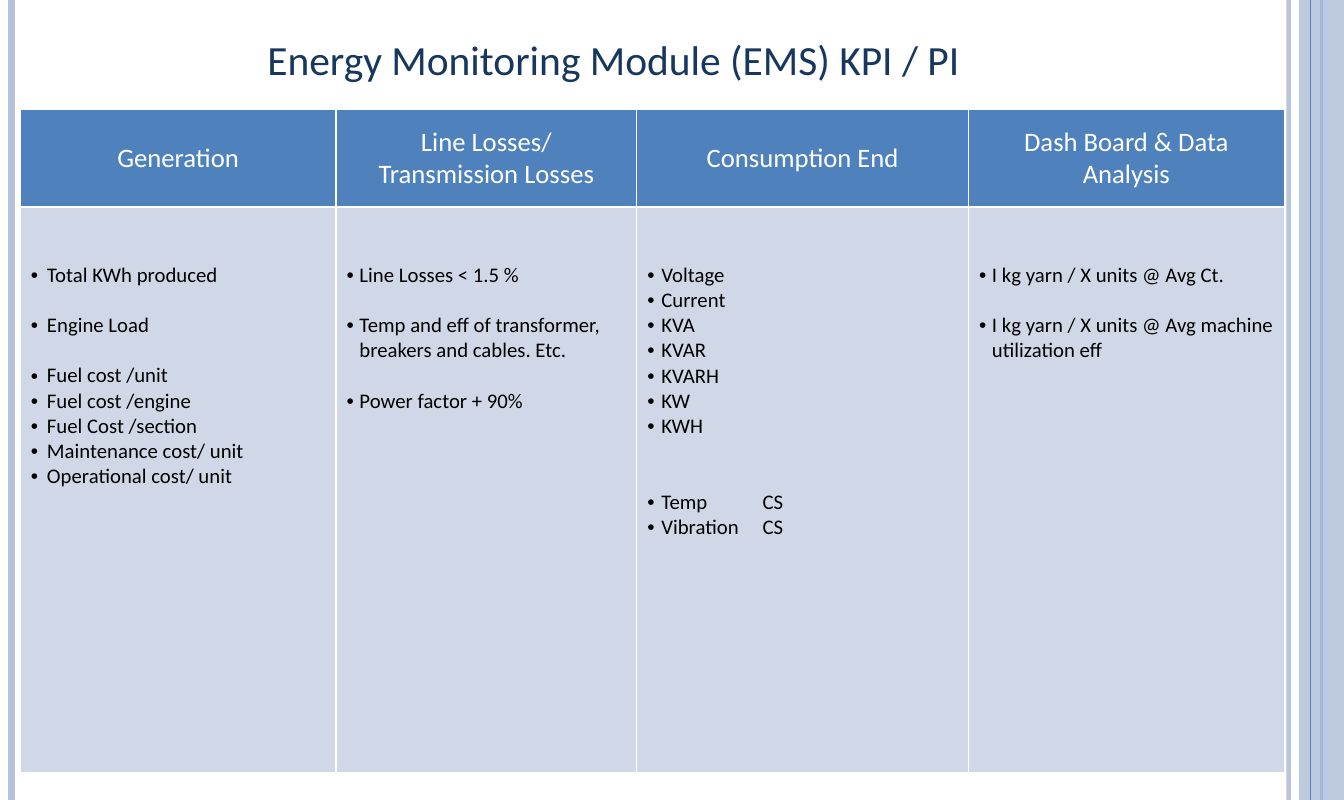
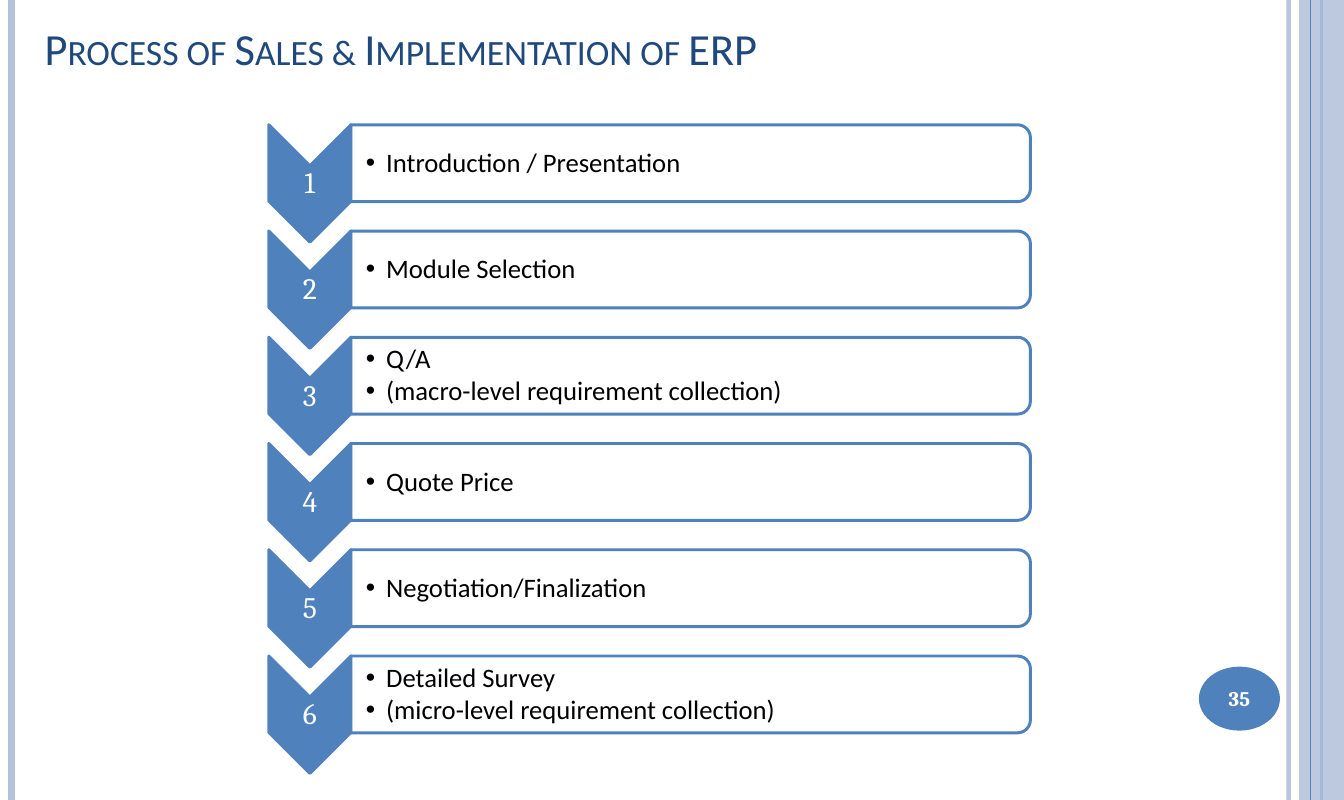
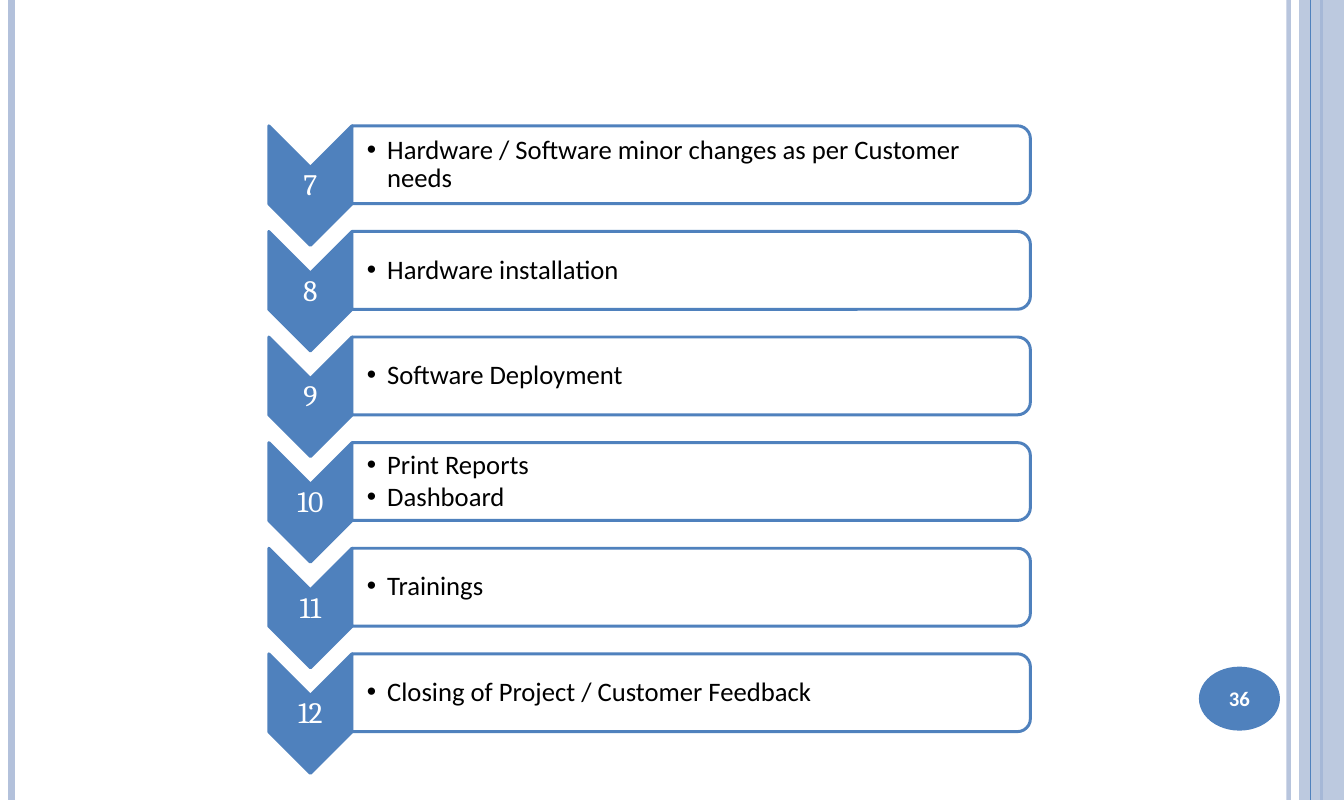
import pptx
import pptx.util
import pptx.dml.color
import pptx.enum.shapes
import pptx.enum.text
import pptx.oxml
import pptx.oxml.ns
from pptx.util import Inches

# Shared style
BLUE, PALE_BLUE, CELL_BLUE = "4F81BD", "B3C1DB", "D0D8E8"
WHITE, BLACK = "FFFFFF", "000000"
SLIDE_WIDTH, SLIDE_HEIGHT = 12.6, 7.5
SHAPES = pptx.enum.shapes.MSO_SHAPE
ALIGN = pptx.enum.text.PP_ALIGN
ANCHOR = pptx.enum.text.MSO_ANCHOR

# Content
KPI_TITLE = "Energy Monitoring Module (EMS) KPI / PI"
BLANK_LINE = 17  # points between groups of bullets
KPI_COLUMNS = [  # width, bullet indent, heading lines, groups of bullets with the gap before each
    (2.96, 0.15, ["Generation"], [
        (0, ["Total KWh produced"]),
        (1, ["Engine Load"]),
        (1, ["Fuel cost /unit", "Fuel cost /engine", "Fuel Cost /section",
             "Maintenance cost/ unit", "Operational cost/ unit"])]),
    (2.82, 0.12, ["Line Losses/", "Transmission Losses"], [
        (0, ["Line Losses < 1.5 %"]),
        (1, ["Temp and eff of transformer, breakers and cables. Etc."]),
        (1, ["Power factor + 90%"])]),
    (3.11, 0.13, ["Consumption End"], [
        (0, ["Voltage", "Current", "KVA", "KVAR", "KVARH", "KW", "KWH"]),
        (2, ["Temp\tCS", "Vibration\tCS"])]),
    (2.96, 0.12, ["Dash Board & Data Analysis"], [
        (0, ["I kg yarn / X units @ Avg Ct."]),
        (1, ["I kg yarn / X units @ Avg machine utilization eff"])]),
]
KPI_ROWS = [0.91, 5.3]

PROCESS_SLIDES = [
    {"title": "Process of Sales & Implementation of ERP", "page": "35", "page_font": "Cambria",
     "first_number": 1, "first_top": 1.17, "last_top": 6.15, "chevron": (1.1, 0.77), "bar_height": 0.72,
     "steps": [["Introduction / Presentation"], ["Module Selection"],
               ["Q/A", "(macro-level requirement collection)"], ["Quote Price"],
               ["Negotiation/Finalization"],
               ["Detailed Survey", "(micro-level requirement collection)"]]},
    {"title": None, "page": "36", "page_font": "Calibri",
     "first_number": 7, "first_top": 1.18, "last_top": 6.13, "chevron": (1.12, 0.78), "bar_height": 0.73,
     "steps": [["Hardware / Software minor changes as per Customer needs"],
               ["Hardware installation"], ["Software Deployment"],
               ["Print Reports", "Dashboard"], ["Trainings"],
               ["Closing of Project / Customer Feedback"]]},
]


def color(value):
    return pptx.dml.color.RGBColor.from_string(value)


def add_xml(parent, tag, **attributes):
    element = pptx.oxml.parse_xml(f"<a:{tag} {pptx.oxml.ns.nsdecls('a')}/>")
    for name, value in attributes.items():
        element.set(name, str(value))
    parent.append(element)
    return element


def set_opacity(fill, percent):
    for node in fill._xPr.iter(pptx.oxml.ns.qn("a:srgbClr")):
        add_xml(node, "alpha", val=percent * 1000)


def add_run(paragraph, text, size=18, font="Calibri", fill=BLACK, bold=False, **attributes):
    run = paragraph.add_run()
    run.text = text
    run.font.size = pptx.util.Pt(size)
    run.font.name = font
    run.font.bold = bold
    run.font.color.rgb = color(fill)
    for name, value in attributes.items():
        run._r.get_or_add_rPr().set(name, str(value))


def add_paragraph(frame, text, align=ALIGN.LEFT, before=0, after=0, spacing=1.0,
                  bullet_indent=None, tab=None, **run_format):
    paragraph = frame.paragraphs[0]
    if paragraph.runs:
        paragraph = frame.add_paragraph()
    paragraph.alignment = align
    paragraph.line_spacing = spacing
    paragraph.space_before = pptx.util.Pt(before)
    paragraph.space_after = pptx.util.Pt(after)
    if bullet_indent:
        properties = paragraph._p.get_or_add_pPr()
        properties.set("marL", str(Inches(bullet_indent)))
        properties.set("indent", str(-Inches(bullet_indent)))
        add_xml(properties, "buFont", typeface="Arial")
        add_xml(properties, "buChar", char="•")
        if tab:
            add_xml(add_xml(properties, "tabLst"), "tab", pos=Inches(tab), algn="l")
    add_run(paragraph, text, **run_format)


def set_frame(frame, anchor=ANCHOR.TOP, margins=(0.1, 0.05, 0.1, 0.05)):
    frame.word_wrap = True
    frame.vertical_anchor = anchor
    (frame.margin_left, frame.margin_top,
     frame.margin_right, frame.margin_bottom) = map(Inches, margins)
    return frame


def add_text_box(slide, left, top, width, height, **frame_format):
    box = slide.shapes.add_textbox(*map(Inches, (left, top, width, height)))
    return set_frame(box.text_frame, **frame_format)


def add_shape(slide, kind, left, top, width, height, fill, line=None, opacity=100, rotation=0):
    shape = slide.shapes.add_shape(kind, *map(Inches, (left, top, width, height)))
    shape.shadow.inherit = False
    shape.rotation = rotation
    shape.fill.solid()
    shape.fill.fore_color.rgb = color(fill)
    if opacity < 100:
        set_opacity(shape.fill, opacity)
    if line:
        shape.line.color.rgb = color(line)
        shape.line.width = pptx.util.Pt(2)
    else:
        shape.line.fill.background()
    return shape


def add_turned_shape(slide, kind, left, top, width, height, fill, **shape_format):
    """Place a shape turned by 90 degrees; the box given is the one seen on the slide."""
    return add_shape(slide, kind, left + (width - height) / 2, top + (height - width) / 2,
                     height, width, fill, line=BLUE, rotation=90, **shape_format)


def add_vertical_line(slide, x, width, fill, opacity=100):
    line = slide.shapes.add_connector(pptx.enum.shapes.MSO_CONNECTOR.STRAIGHT,
                                      Inches(x), 0, Inches(x), Inches(SLIDE_HEIGHT))
    line.line.color.rgb = color(fill)
    line.line.width = pptx.util.Pt(width)
    if opacity < 100:
        set_opacity(line.line.fill, opacity)
    add_xml(line._element.spPr, "effectLst")


def add_base_slide(presentation):
    slide = presentation.slides.add_slide(presentation.slide_layouts[6])
    # Side bands
    add_vertical_line(slide, 12.08, 3, PALE_BLUE, opacity=93)
    add_vertical_line(slide, 0.11, 4.5, PALE_BLUE)
    add_vertical_line(slide, 12.39, 1.5, BLUE)
    add_shape(slide, SHAPES.RECTANGLE, 12.18, 0, SLIDE_WIDTH - 12.18, SLIDE_HEIGHT,
              PALE_BLUE, opacity=87)
    add_vertical_line(slide, 12.29, 0.75, BLUE)
    return slide


def style_cell(cell, fill):
    cell.fill.solid()
    cell.fill.fore_color.rgb = color(fill)
    properties = cell._tc.get_or_add_tcPr()
    for index, side in enumerate(("lnL", "lnR", "lnT", "lnB")):
        border = add_xml(properties, side, w=pptx.util.Pt(1))
        add_xml(add_xml(border, "solidFill"), "srgbClr", val=WHITE)
        properties.insert(index, border)


def add_kpi_slide(presentation):
    slide = add_base_slide(presentation)
    add_paragraph(add_text_box(slide, 1.72, 0.27, 8.06, 0.57), KPI_TITLE,
                  align=ALIGN.CENTER, size=28, fill="17375E")
    # Table
    widths = [column[0] for column in KPI_COLUMNS]
    table = slide.shapes.add_table(len(KPI_ROWS), len(widths), Inches(0.19), Inches(1.03),
                                   Inches(sum(widths)), Inches(sum(KPI_ROWS))).table
    table.first_row = table.horz_banding = False
    for row, height in zip(table.rows, KPI_ROWS):
        row.height = Inches(height)
    for index, (width, indent, heading, groups) in enumerate(KPI_COLUMNS):
        table.columns[index].width = Inches(width)
        head, body = table.cell(0, index), table.cell(1, index)
        style_cell(head, BLUE)
        style_cell(body, CELL_BLUE)
        head.vertical_anchor = ANCHOR.MIDDLE
        body.margin_top = Inches(0.52)
        for line in heading:
            add_paragraph(head.text_frame, line, align=ALIGN.CENTER, fill=WHITE)
        for blank_lines, items in groups:
            for position, item in enumerate(items):
                before = 0 if position else blank_lines * BLANK_LINE
                add_paragraph(body.text_frame, item, before=before, size=14,
                              bullet_indent=indent, tab=1.08 if "\t" in item else None)


def add_step(slide, top, number, lines, chevron, bar_height):
    chevron_height, chevron_width = chevron
    left, right = 2.52, 9.66
    bar_left = left + chevron_width
    add_turned_shape(slide, SHAPES.CHEVRON, left, top, chevron_width, chevron_height, BLUE)
    frame = add_text_box(slide, left, top + chevron_height / 2 - 0.16, chevron_width, 0.33,
                         anchor=ANCHOR.MIDDLE, margins=[0.01] * 4)
    add_paragraph(frame, str(number), align=ALIGN.CENTER, spacing=0.9, after=7,
                  size=20, font="Cambria", fill=WHITE)
    add_turned_shape(slide, SHAPES.ROUND_2_SAME_RECTANGLE, bar_left, top,
                     right - bar_left, bar_height, WHITE, opacity=90)
    frame = add_text_box(slide, bar_left, top + 0.04, 6.33, 0.65,
                         anchor=ANCHOR.MIDDLE, margins=(0.14, 0.01, 0.01, 0.01))
    for line in lines:
        add_paragraph(frame, line, spacing=0.9, after=2, bullet_indent=0.19)


def add_process_slide(presentation, content):
    slide = add_base_slide(presentation)
    if content["title"]:
        frame = add_text_box(slide, 0.32, 0.03, 11.03, 0.72, anchor=ANCHOR.BOTTOM)
        add_paragraph(frame, content["title"], size=30, fill="1F497D", cap="small")
    # Page number
    badge = add_shape(slide, SHAPES.OVAL, 11.24, 6.25, 0.76, 0.6, BLUE)
    set_frame(badge.text_frame, anchor=ANCHOR.MIDDLE, margins=[0] * 4)
    add_paragraph(badge.text_frame, content["page"], align=ALIGN.CENTER, size=14,
                  font=content["page_font"], fill=WHITE, bold=True)
    # Steps at equal distances
    steps = content["steps"]
    pitch = (content["last_top"] - content["first_top"]) / (len(steps) - 1)
    for index, lines in enumerate(steps):
        add_step(slide, content["first_top"] + index * pitch, content["first_number"] + index,
                 lines, content["chevron"], content["bar_height"])


def main():
    presentation = pptx.Presentation()
    presentation.slide_width = Inches(SLIDE_WIDTH)
    presentation.slide_height = Inches(SLIDE_HEIGHT)
    add_kpi_slide(presentation)
    for content in PROCESS_SLIDES:
        add_process_slide(presentation, content)
    presentation.save("out.pptx")


if __name__ == "__main__":
    main()
